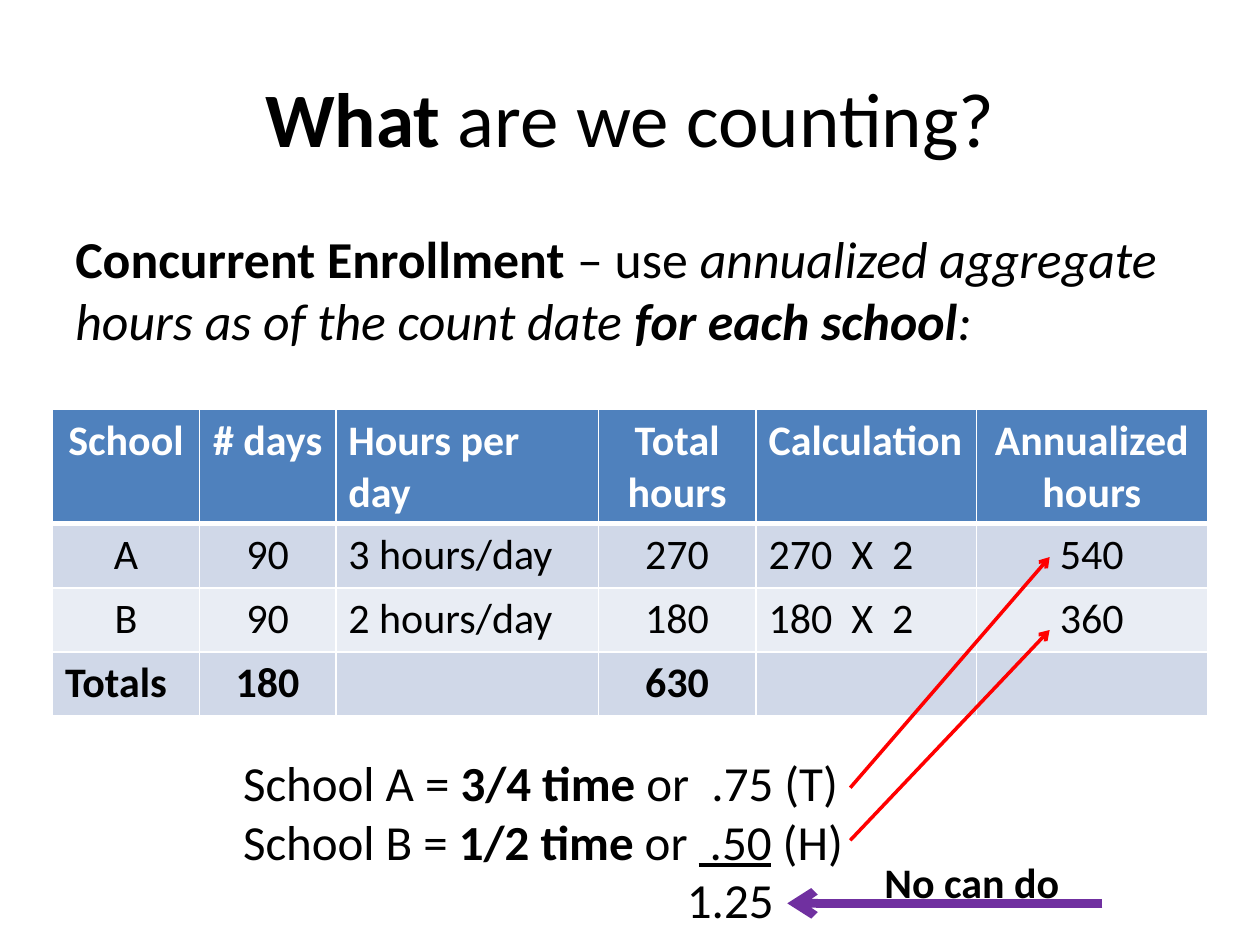
from lxml import etree
from pptx import Presentation
from pptx import util as u
from pptx.dml.color import RGBColor
from pptx.enum import shapes, text
from pptx.oxml.ns import qn

COLORS = {"ink": "000000", "paper": "FFFFFF", "header": "4F81BD",
          "band_dark": "D0D8E8", "band_light": "E9EDF4",
          "link": "FF0000", "warning": "7030A0"}
BOLD, ITALIC = {"bold": True}, {"italic": True}
BOLD_ITALIC = BOLD | ITALIC
UNDERLINED = {"underline": True}
LEFT, CENTER = text.PP_ALIGN.LEFT, text.PP_ALIGN.CENTER

HOURS = [
    ("School", "# days", "Hours per day", "Total hours", "Calculation", "Annualized hours"),
    ("A", "90", "3 hours/day", "270", "270  X  2", "540"),
    ("B", "90", "2 hours/day", "180", "180  X  2", "360"),
    ("Totals", "180", "", "630", "", ""),
]
COLUMN_WIDTHS = (2.96, 2.75, 5.29, 3.18, 4.44, 4.66)
ROW_HEIGHTS = (2.3, 1.29, 1.29, 1.29)
LEFT_COLUMNS = (2, 4)


def rgb(name):
    return RGBColor.from_string(COLORS[name])


def write_runs(paragraph, runs, size, color="ink", align=LEFT):
    """Fill a paragraph from (wording, font values) pairs."""
    paragraph.alignment = align
    for wording, values in runs:
        run = paragraph.add_run()
        run.text = wording
        run.font.color.rgb = rgb(color)
        for name, value in ({"name": "Calibri", "size": u.Pt(size)} | values).items():
            setattr(run.font, name, value)


def add_text(slide, box, paragraphs, size, align=LEFT, anchor=text.MSO_ANCHOR.TOP):
    frame = slide.shapes.add_textbox(*map(u.Cm, box)).text_frame
    frame.word_wrap = True
    frame.vertical_anchor = anchor
    for index, runs in enumerate(paragraphs):
        paragraph = frame.add_paragraph() if index else frame.paragraphs[0]
        write_runs(paragraph, runs, size, align=align)
    return frame


def add_arrow(slide, start, end, color, width):
    arrow = slide.shapes.add_connector(
        shapes.MSO_CONNECTOR.STRAIGHT, *map(u.Cm, start + end))
    arrow.line.color.rgb = rgb(color)
    arrow.line.width = u.Pt(width)
    etree.SubElement(arrow.line._get_or_add_ln(), qn("a:tailEnd"), type="arrow")
    etree.SubElement(arrow._element.spPr, qn("a:effectLst"))


def set_borders(cell, bottom=1, top=1):
    props = cell._tc.get_or_add_tcPr()
    for index, (side, width) in enumerate(zip("LRTB", (1, 1, top, bottom))):
        line = etree.Element(qn(f"a:ln{side}"), w=str(u.Pt(width)))
        fill = etree.SubElement(line, qn("a:solidFill"))
        etree.SubElement(fill, qn("a:srgbClr"), val=COLORS["paper"])
        props.insert(index, line)


def add_heading(slide, left, top, width):
    add_text(slide, (left, top, width, 3.18),
             [[("What", BOLD), (" are we counting?", {})]],
             44, CENTER, text.MSO_ANCHOR.MIDDLE)
    add_text(slide, (left, top + 3.69, width, 3.38),
             [[("Concurrent Enrollment", BOLD), (" – use ", {}),
               ("annualized aggregate hours as of the count date ", ITALIC),
               ("for each school", BOLD_ITALIC), (":", ITALIC)]], 29.6)


def add_hours_table(slide, left, top):
    table = slide.shapes.add_table(
        len(HOURS), len(COLUMN_WIDTHS), u.Cm(left), u.Cm(top),
        u.Cm(sum(COLUMN_WIDTHS)), u.Cm(sum(ROW_HEIGHTS))).table
    for column, width in zip(table.columns, COLUMN_WIDTHS):
        column.width = u.Cm(width)
    for row, height in zip(table.rows, ROW_HEIGHTS):
        row.height = u.Cm(height)
    last = len(HOURS) - 1
    for r, record in enumerate(HOURS):
        band = "header" if r == 0 else "band_dark" if r % 2 else "band_light"
        for c, wording in enumerate(record):
            cell = table.cell(r, c)
            cell.fill.solid()
            cell.fill.fore_color.rgb = rgb(band)
            set_borders(cell, bottom=1 if r else 3, top=3 if r == 1 else 1)
            is_left = c in LEFT_COLUMNS or (r, c) == (last, 0)
            if wording:
                write_runs(cell.text_frame.paragraphs[0],
                           [(wording, {"bold": r in (0, last)})], 24,
                           "ink" if r else "paper", LEFT if is_left else CENTER)


def add_time_shares(slide, left, top):
    """Place the sum of the time shares, its arrows and the verdict."""
    shares = add_text(slide, (left, top, 13.77, 3.84), [
        [("School A = ", {}), ("3/4 time ", BOLD), ("or  .75 (T)", {})],
        [("School B = ", {}), ("1/2 time", BOLD), (" or ", {}),
         (" ", BOLD | UNDERLINED), (".50", UNDERLINED), (" (H)", {})],
        [("1.25", {})]], 28)
    shares.paragraphs[-1]._p.get_or_add_pPr().set("marL", str(u.Cm(8.95)))

    share_end, hours_start = left + 12.49, left + 16.51
    for start_drop, end_rise in ((0.84, 3.81), (1.9, 2.34)):
        add_arrow(slide, (share_end, top + start_drop),
                  (hours_start, top - end_rise), "link", 2)
    add_arrow(slide, (left + 17.57, top + 3.17), (left + 11.22, top + 3.17), "warning", 5)
    add_text(slide, (left + 12.93, top + 2.11, 4.44, 1.27), [[("No can do", BOLD)]], 24)


def main():
    deck = Presentation()
    deck.slide_width, deck.slide_height = u.Cm(25.4), u.Cm(19.05)
    slide = deck.slides.add_slide(deck.slide_layouts[6])
    add_heading(slide, 1.27, 0.76, 22.86)
    add_hours_table(slide, 1.06, 8.26)
    add_time_shares(slide, 4.65, 15.04)
    deck.save("out.pptx")


if __name__ == "__main__":
    main()
